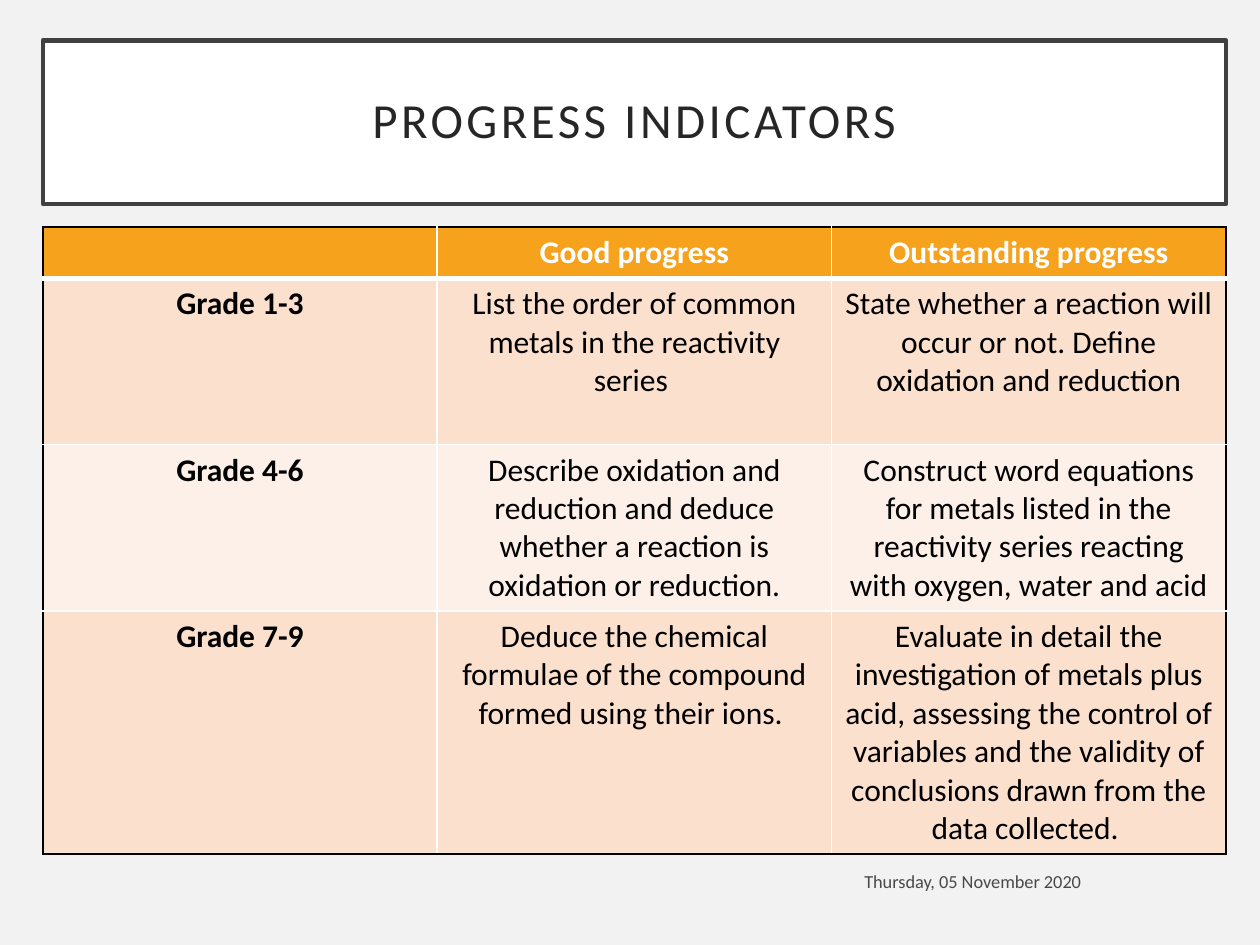
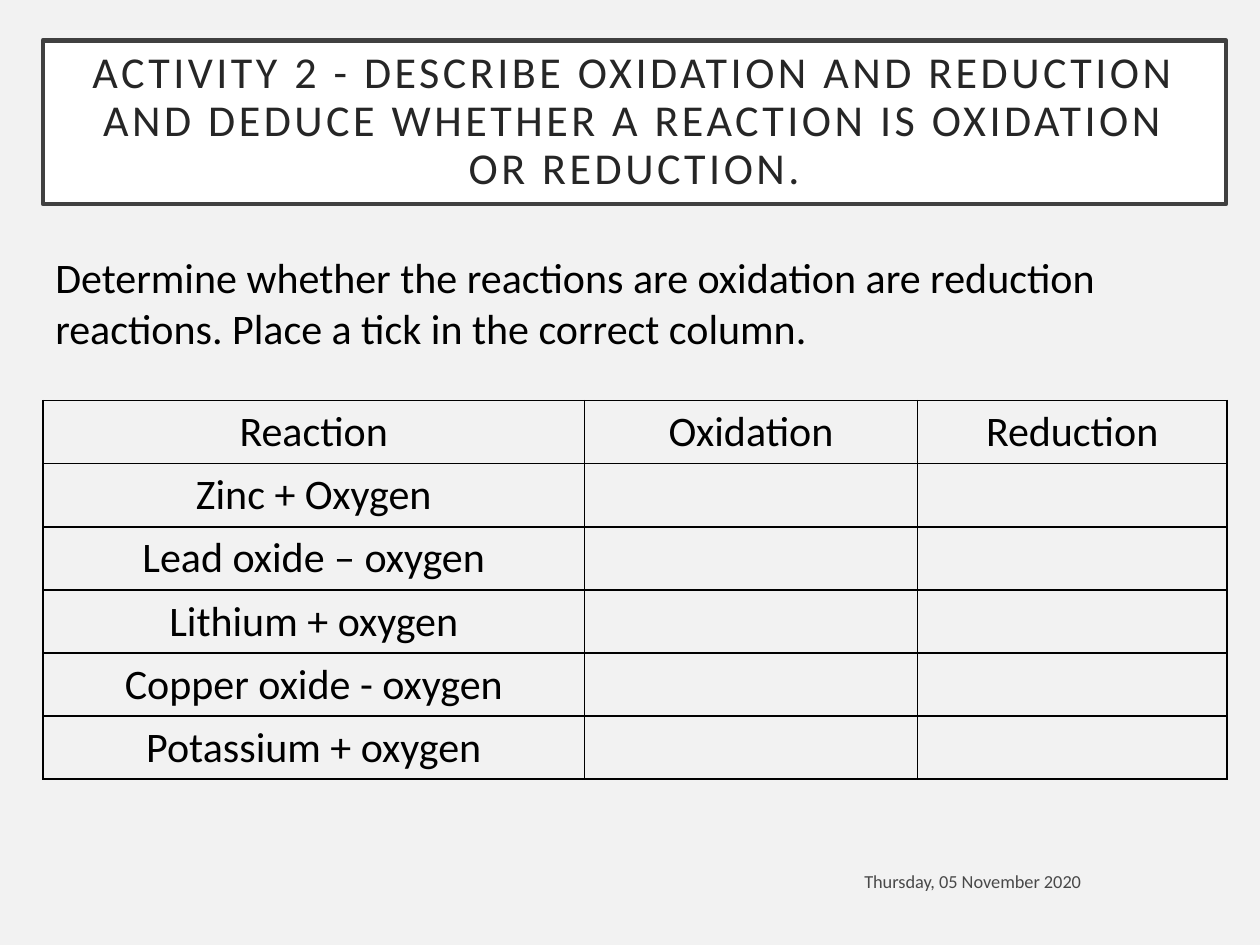
import pptx
import pptx.dml.color
import pptx.enum.text
import pptx.oxml
import pptx.oxml.ns
import pptx.util
from lxml import etree

# Content
DATE = "Thursday, 05 November 2020"
PROGRESS_TITLE = "PROGRESS INDICATORS"
PROGRESS_ROWS = [
    ("", "Good progress", "Outstanding progress"),
    ("Grade 1-3",
     "List the order of common metals in the reactivity series ",
     "State whether a reaction will occur or not. Define oxidation and reduction"),
    ("Grade 4-6",
     "Describe oxidation and reduction and deduce whether a reaction is "
     "oxidation or reduction.",
     "Construct word equations for metals listed in the reactivity series "
     "reacting with oxygen, water and acid"),
    ("Grade 7-9",
     "Deduce the chemical formulae of the compound formed using their ions. ",
     "Evaluate in detail the investigation of metals plus acid, assessing the "
     "control of variables and the validity of conclusions drawn from the data "
     "collected. "),
]
ACTIVITY_TITLE = ("ACTIVITY 2 - DESCRIBE OXIDATION AND REDUCTION AND DEDUCE WHETHER "
                  "A REACTION IS OXIDATION OR REDUCTION.")
ACTIVITY_TASK = ("Determine whether the reactions are oxidation are reduction "
                 "reactions. Place a tick in the correct column.")
ACTIVITY_HEADINGS = ("Reaction", "Oxidation", "Reduction")
REACTIONS = ["Zinc + Oxygen", "Lead oxide – oxygen", "Lithium + oxygen",
             "Copper oxide - oxygen", "Potassium + oxygen"]

# Shared style, lengths in inches
FONT = "Calibri"
COLOURS = {
    "background": "F2F2F2", "white": "FFFFFF", "black": "000000",
    "frame": "404040", "title": "262626", "date": "494949",
    "header": "F6A21D", "dark band": "FBE0CD", "light band": "FDF0E8",
}
LEFT, WIDTH = 0.34, 9.39
INCH = pptx.util.Inches
PP_ALIGN = pptx.enum.text.PP_ALIGN
ANCHOR = pptx.enum.text.MSO_ANCHOR


def colour(name):
    return pptx.dml.color.RGBColor.from_string(COLOURS[name])


def style_text(paragraph, size, colour_name="black", align=PP_ALIGN.CENTER, bold=False):
    paragraph.alignment = align
    paragraph.font.name = FONT
    paragraph.font.size = pptx.util.Pt(size)
    paragraph.font.bold = bold
    paragraph.font.color.rgb = colour(colour_name)


def add_text(slide, text, box, size, colour_name, align, anchor):
    frame = slide.shapes.add_textbox(*map(INCH, box)).text_frame
    frame.word_wrap = True
    frame.vertical_anchor = anchor
    frame.text = text
    style_text(frame.paragraphs[0], size, colour_name, align)


def add_slide(presentation, title_text, title_size):
    """Title-only slide with the framed title and the date."""
    slide = presentation.slides.add_slide(presentation.slide_layouts[5])
    title = slide.shapes.title
    title.left, title.top, title.width, title.height = map(INCH, (LEFT, 0.32, WIDTH, 1.3))
    title.fill.solid()
    title.fill.fore_color.rgb = colour("white")
    title.line.color.rgb = colour("frame")
    title.line.width = pptx.util.Pt(2.5)

    frame = title.text_frame
    frame.text = title_text
    frame.auto_size = pptx.enum.text.MSO_AUTO_SIZE.NONE
    frame.word_wrap = True
    frame.vertical_anchor = ANCHOR.MIDDLE
    frame.margin_left = frame.margin_right = INCH(0.2)
    frame.margin_top = frame.margin_bottom = INCH(0.2)
    paragraph = frame.paragraphs[0]
    style_text(paragraph, title_size, "title")
    paragraph.line_spacing = 0.9
    # Letter spacing of 2 points
    paragraph.runs[0]._r.get_or_add_rPr().set("spc", "200")

    add_text(slide, DATE, (6.42, 6.82, 2.26, 0.35), 10.5, "date",
             PP_ALIGN.RIGHT, ANCHOR.MIDDLE)
    return slide


def set_borders(cell, borders):
    """borders maps each side (L, R, T, B) to a colour name and a width in points."""
    properties = cell._tc.get_or_add_tcPr()
    for side in "LRTB":
        colour_name, width = borders[side]
        line = etree.SubElement(properties, pptx.oxml.ns.qn(f"a:ln{side}"),
                                w=str(pptx.util.Pt(width)))
        fill = etree.SubElement(line, pptx.oxml.ns.qn("a:solidFill"))
        etree.SubElement(fill, pptx.oxml.ns.qn("a:srgbClr"), val=COLOURS[colour_name])


def add_table(slide, rows, top, widths, heights, size, style_cell):
    """style_cell(row, column) gives fill, text colour, bold and borders."""
    table = slide.shapes.add_table(
        len(rows), len(widths), INCH(LEFT), INCH(top),
        INCH(sum(widths)), INCH(sum(heights))).table
    table.first_row = table.horz_banding = False
    for column, width in zip(table.columns, widths):
        column.width = INCH(width)
    for row, height in zip(table.rows, heights):
        row.height = INCH(height)
    for r, texts in enumerate(rows):
        for c, text in enumerate(texts):
            cell = table.cell(r, c)
            fill, text_colour, bold, borders = style_cell(r, c)
            cell.text = text
            style_text(cell.text_frame.paragraphs[0], size, text_colour, bold=bold)
            set_borders(cell, borders)
            if fill:
                cell.fill.solid()
                cell.fill.fore_color.rgb = colour(fill)
            else:
                cell.fill.background()


def progress_style(row, column):
    """Banded rows, white inner lines and a black outer edge."""
    last_row, last_column = len(PROGRESS_ROWS) - 1, len(PROGRESS_ROWS[0]) - 1
    header_line, inner, outer = ("white", 3), ("white", 1), ("black", 1)
    borders = {
        "L": outer if column == 0 else inner,
        "R": outer if column == last_column else inner,
        "T": outer if row == 0 else header_line if row == 1 else inner,
        "B": outer if row == last_row else header_line if row == 0 else inner,
    }
    if row == 0:
        return "header", "white", True, borders
    band = "dark band" if row % 2 else "light band"
    return band, "black", column == 0, borders


def activity_style(row, column):
    return None, "black", False, dict.fromkeys("LRTB", ("black", 1))


def main():
    presentation = pptx.Presentation()
    presentation.slide_width, presentation.slide_height = INCH(10), INCH(7.5)
    background = presentation.slide_master.background.fill
    background.solid()
    background.fore_color.rgb = colour("background")

    # Progress indicators
    slide = add_slide(presentation, PROGRESS_TITLE, 28)
    add_table(slide, PROGRESS_ROWS, 1.8, [WIDTH / 3] * 3,
              [0.41, 1.32, 1.32, 1.93], 18, progress_style)

    # Activity 2
    slide = add_slide(presentation, ACTIVITY_TITLE, 25.2)
    rows = [ACTIVITY_HEADINGS] + [(reaction, "", "") for reaction in REACTIONS]
    add_table(slide, rows, 3.18, [4.3, 2.64, 2.46], [0.5] * len(rows), 24, activity_style)
    add_text(slide, ACTIVITY_TASK, (LEFT, 1.95, WIDTH, 0.91), 24, "black",
             PP_ALIGN.LEFT, ANCHOR.TOP)

    presentation.save("out.pptx")


if __name__ == "__main__":
    main()
